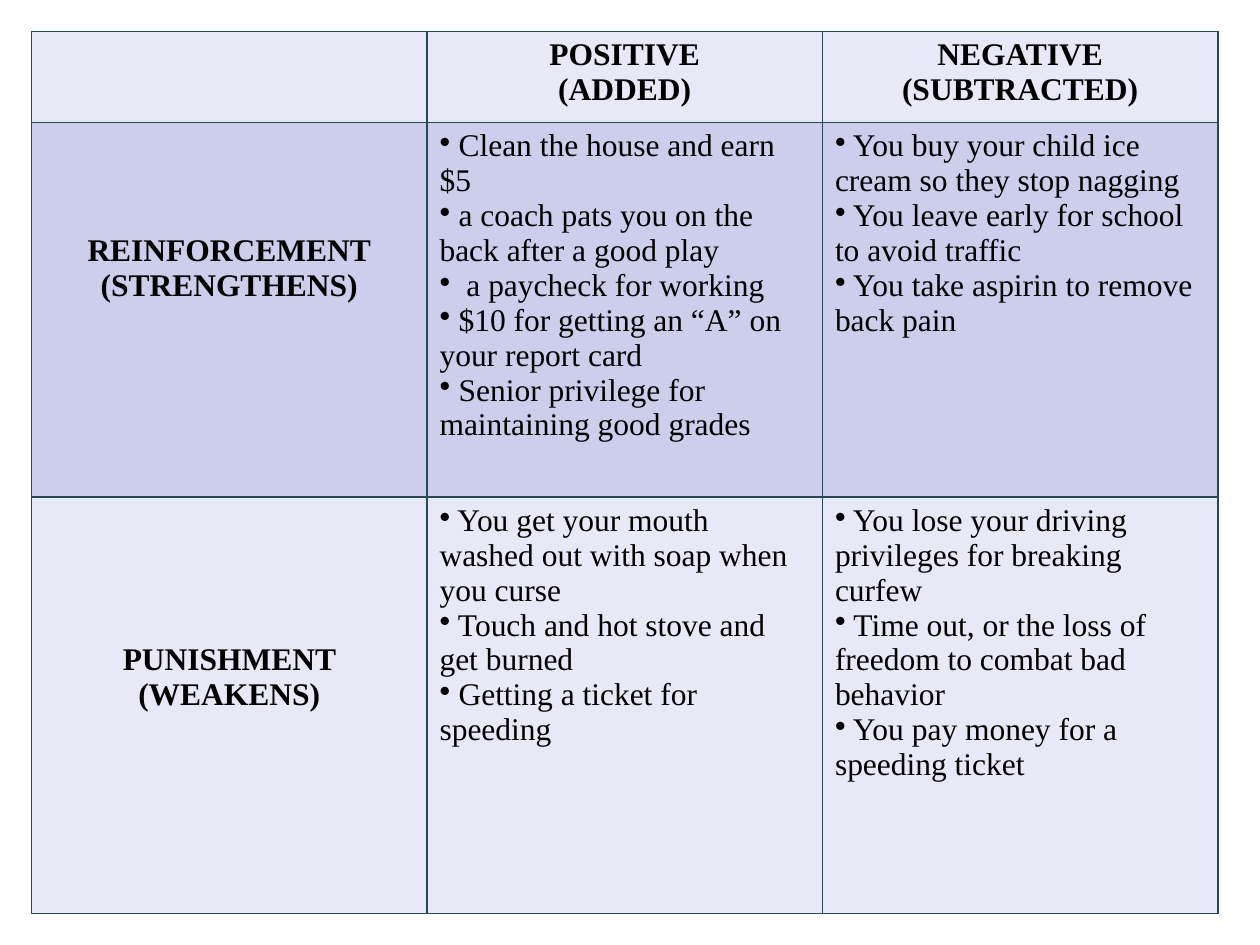
import pptx
import pptx.util
import pptx.dml.color
import pptx.enum.text
import pptx.oxml
import pptx.oxml.ns

Pt = pptx.util.Pt

HEADINGS = [["POSITIVE", "(ADDED)"], ["NEGATIVE", "(SUBTRACTED)"]]
SECTIONS = [
    {
        "label": ["REINFORCEMENT", "(STRENGTHENS)"],
        "lines_above": 3,
        "examples": [
            ["Clean the house and earn $5",
             "a coach pats you on the back after a good play",
             " a paycheck for working",
             "$10 for getting an “A” on your report card",
             "Senior privilege for maintaining good grades"],
            ["You buy your child ice cream so they stop nagging",
             "You leave early for school to avoid traffic",
             "You take aspirin to remove back pain"],
        ],
    },
    {
        "label": ["PUNISHMENT (WEAKENS)"],
        "lines_above": 4,
        "examples": [
            ["You get your mouth washed out with soap when you curse",
             "Touch and hot stove and get burned",
             "Getting a ticket for speeding"],
            ["You lose your driving privileges for breaking curfew",
             "Time out, or the loss of freedom to combat bad behavior",
             "You pay money for a speeding ticket"],
        ],
    },
]

THEME = {
    "font": "Times New Roman",
    "size": 18,
    "line_height": 19.93,
    "text": "000000",
    "border": "244A58",
    "border_width": 1,
    "bands": ["E8E8F6", "CDCDEC"],
}
TABLE_LEFT = TABLE_TOP = 18
COLUMN_WIDTHS = [226] * 3
ROW_HEIGHTS = [52, 214, 238]
CELL_MARGIN = 3.6


def color(name):
    return pptx.dml.color.RGBColor.from_string(name)


def style_cell(cell, fill):
    properties = cell._tc.get_or_add_tcPr()
    for side in ("lnL", "lnR", "lnT", "lnB"):
        properties.append(pptx.oxml.parse_xml(
            f'<a:{side} {pptx.oxml.ns.nsdecls("a")} w="{Pt(THEME["border_width"])}">'
            f'<a:solidFill><a:srgbClr val="{THEME["border"]}"/></a:solidFill></a:{side}>'))
    cell.fill.solid()
    cell.fill.fore_color.rgb = color(fill)


def add_bullet(paragraph):
    properties = paragraph._p.get_or_add_pPr()
    properties.set("marL", "0")
    properties.set("indent", "0")
    properties.append(pptx.oxml.parse_xml(
        f'<a:buChar {pptx.oxml.ns.nsdecls("a")} char="•"/>'))


def write_cell(cell, lines, bulleted=False, lines_above=0):
    cell.margin_top = Pt(CELL_MARGIN + lines_above * THEME["line_height"])
    text_frame = cell.text_frame
    text_frame.text = "\n".join(" " + line if bulleted else line for line in lines)
    for paragraph in text_frame.paragraphs:
        if bulleted:
            add_bullet(paragraph)
        else:
            paragraph.alignment = pptx.enum.text.PP_ALIGN.CENTER
        for run in paragraph.runs:
            run.font.name = THEME["font"]
            run.font.size = Pt(THEME["size"])
            run.font.bold = not bulleted
            run.font.color.rgb = color(THEME["text"])


def main():
    presentation = pptx.Presentation()
    presentation.slide_width, presentation.slide_height = Pt(720), Pt(540)
    slide = presentation.slides.add_slide(presentation.slide_layouts[6])

    table = slide.shapes.add_table(
        len(ROW_HEIGHTS), len(COLUMN_WIDTHS), Pt(TABLE_LEFT), Pt(TABLE_TOP),
        Pt(sum(COLUMN_WIDTHS)), Pt(sum(ROW_HEIGHTS))).table
    table.first_row = table.horz_banding = False
    for column, width in zip(table.columns, COLUMN_WIDTHS):
        column.width = Pt(width)
    for index, (row, height) in enumerate(zip(table.rows, ROW_HEIGHTS)):
        row.height = Pt(height)
        for cell in row.cells:
            style_cell(cell, THEME["bands"][index % 2])

    for column, heading in enumerate(HEADINGS, start=1):
        write_cell(table.cell(0, column), heading)
    for row, section in enumerate(SECTIONS, start=1):
        write_cell(table.cell(row, 0), section["label"], lines_above=section["lines_above"])
        for column, examples in enumerate(section["examples"], start=1):
            write_cell(table.cell(row, column), examples, bulleted=True)

    presentation.save("out.pptx")


if __name__ == "__main__":
    main()
